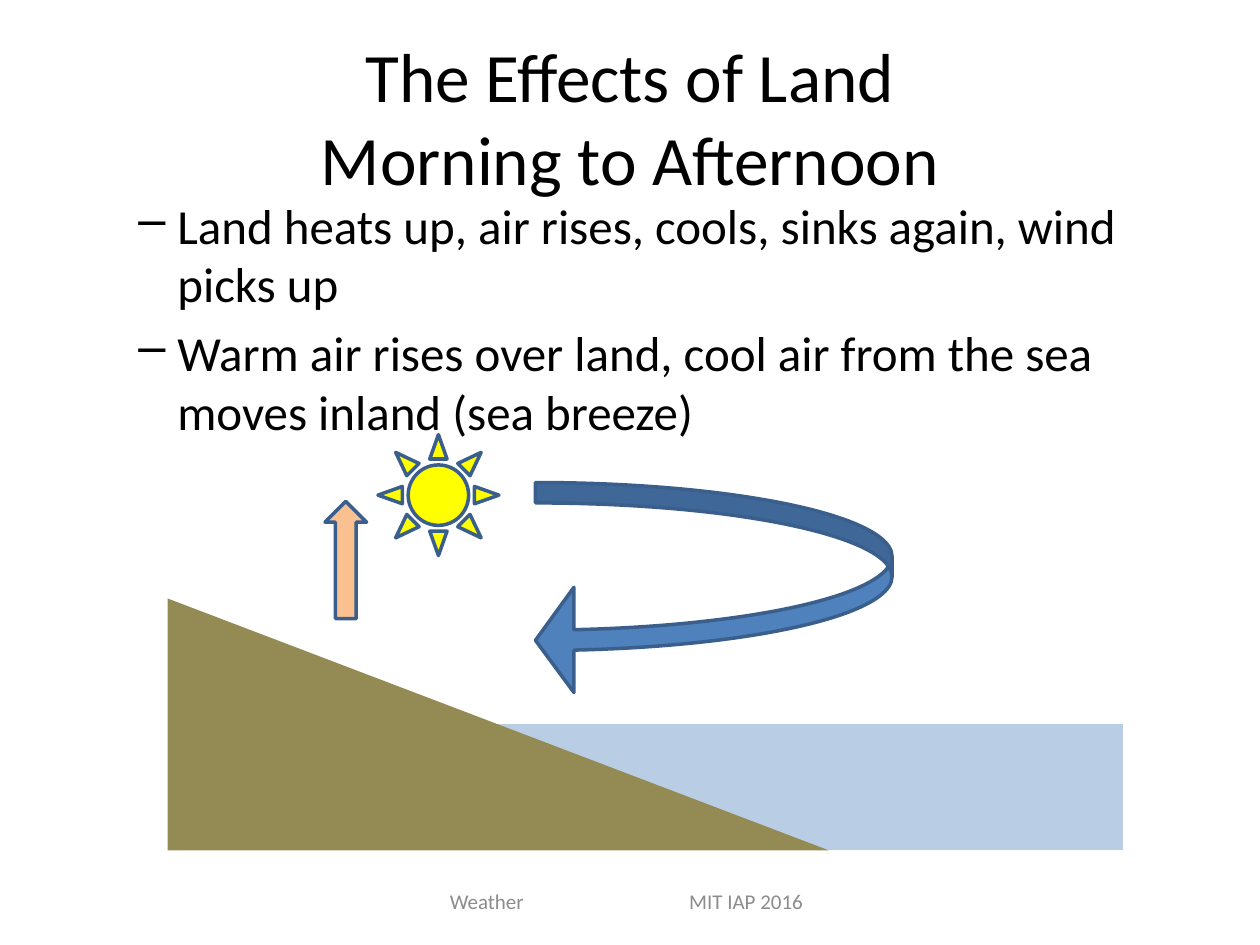
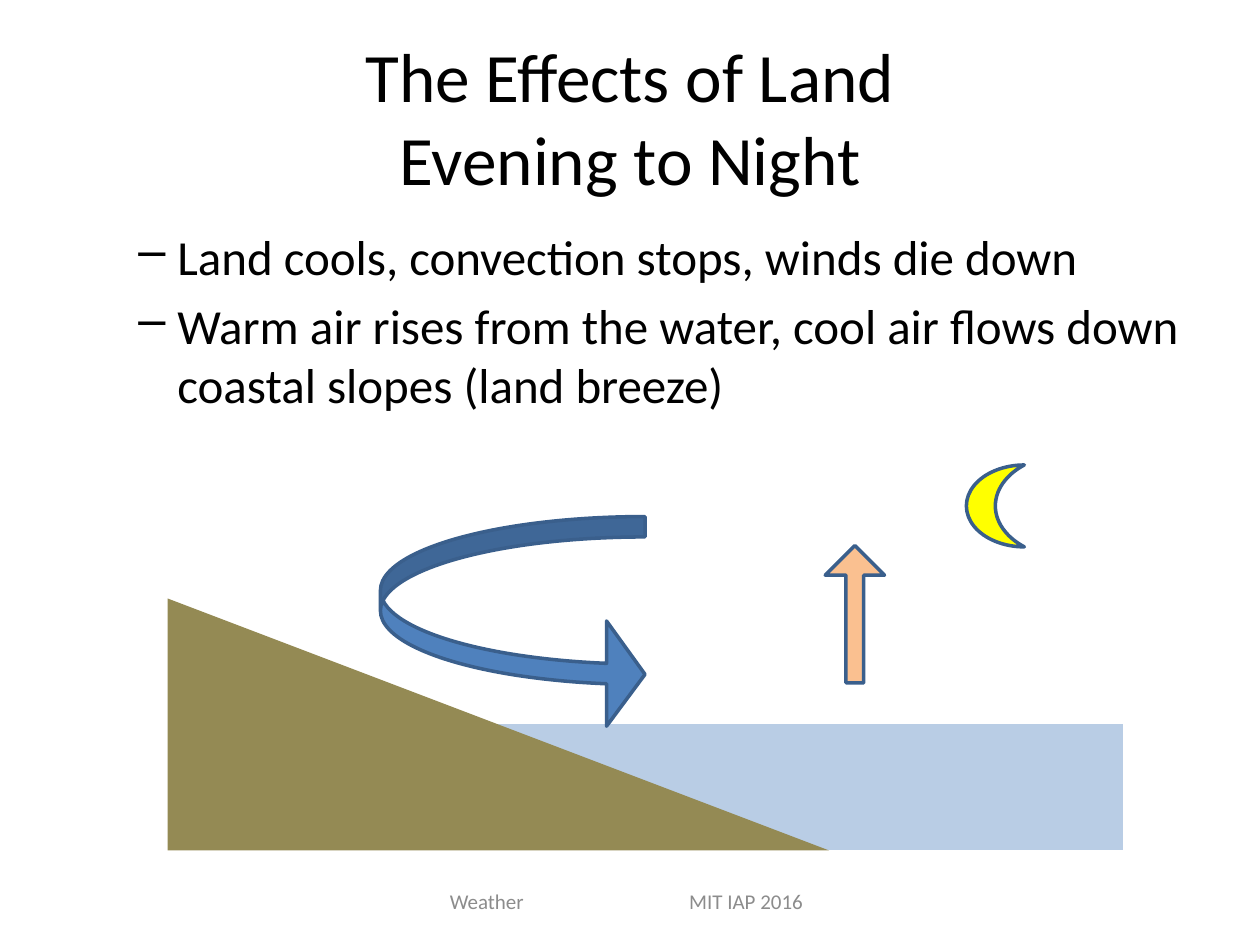
import collections

import pptx
import pptx.dml.color
import pptx.enum.shapes
import pptx.enum.text
import pptx.oxml
import pptx.oxml.ns
import pptx.util

Inches = pptx.util.Inches
Points = pptx.util.Pt
Shape = pptx.enum.shapes.MSO_SHAPE
Align = pptx.enum.text.PP_ALIGN
Anchor = pptx.enum.text.MSO_ANCHOR
Box = collections.namedtuple("Box", "left top width height")

FONT = "Calibri"
BLACK = "000000"
GREY = "8C8C8C"
SEA = "B9CDE5"
LAND = "948A54"
LIGHT = "FFFF00"
WARM_AIR = "FAC090"
WIND = "4F81BD"
OUTLINE = "3A5F8C"

TITLE = Box(0.5, 0.3, 9, 1.25)
SCENE = Box(1.33, 3.45, 7.58, 3.3)
FOOTER = Box(3.42, 6.95, 3.17, 0.4)
BREEZE_BENDS = (0.097, 0.5, 0.183)


def color(hex_code):
    return pptx.dml.color.RGBColor.from_string(hex_code)


def add_property(para, xml):
    namespace = pptx.oxml.ns.nsdecls("a")
    para._p.get_or_add_pPr().append(pptx.oxml.parse_xml(xml.format(namespace)))


def place(shape, box):
    shape.left, shape.top, shape.width, shape.height = map(Inches, box)


def write(para, text, size, hex_code=BLACK, align=Align.LEFT):
    para.text = text
    para.alignment = align
    for font in [para.font] + [span.font for span in para.runs]:
        font.name = FONT
        font.size = Points(size)
        font.color.rgb = color(hex_code)


def add_text_frame(page, box, anchor=Anchor.TOP):
    frame = page.shapes.add_textbox(*map(Inches, box)).text_frame
    frame.word_wrap = True
    frame.vertical_anchor = anchor
    return frame


def set_title(page, box, text):
    title = page.shapes.title
    place(title, box)
    frame = title.text_frame
    frame.word_wrap = True
    frame.auto_size = pptx.enum.text.MSO_AUTO_SIZE.NONE
    frame.vertical_anchor = Anchor.MIDDLE
    write(frame.paragraphs[0], text, 39.6, align=Align.CENTER)


def add_points(page, box, points):
    frame = add_text_frame(page, box)
    for index, point in enumerate(points):
        para = frame.add_paragraph() if index else frame.paragraphs[0]
        properties = para._p.get_or_add_pPr()
        properties.set("marL", str(Inches(0.81)))
        properties.set("indent", str(Inches(-0.31)))
        if index:
            para.space_before = Points(5.6)
        add_property(para, '<a:buChar {} char="–"/>')
        write(para, point, 28)


def add_footer(page, box):
    frame = add_text_frame(page, box, Anchor.MIDDLE)
    frame.margin_left = Inches(0.15)
    para = frame.paragraphs[0]
    tab = f'<a:tab pos="{Inches(1.9)}" algn="l"/>'
    add_property(para, "<a:tabLst {}>" + tab + "</a:tabLst>")
    write(para, "Weather\tMIT IAP 2016", 12, GREY)


def add_part(page, scene, kind, offset, fill, outlined=True, bends=(), flipped=False):
    left, top, width, height = offset
    part = page.shapes.add_shape(
        kind, *map(Inches, (scene.left + left, scene.top + top, width, height)))
    part.shadow.inherit = False
    part.fill.solid()
    part.fill.fore_color.rgb = color(fill)
    if outlined:
        part.line.color.rgb = color(OUTLINE)
        part.line.width = Points(2)
    else:
        part.line.fill.background()
    for index, bend in enumerate(bends):
        part.adjustments[index] = bend
    if flipped:
        part._element.spPr.get_or_add_xfrm().set("flipH", "1")


def add_coast(page, scene):
    sea_height, land_height = 1, 2
    add_part(page, scene, Shape.FLOWCHART_PROCESS,
             (0, scene.height - sea_height, scene.width, sea_height), SEA, outlined=False)
    add_part(page, scene, Shape.RIGHT_TRIANGLE,
             (0, scene.height - land_height, 5.25, land_height), LAND, outlined=False)


def add_sea_breeze(page, scene):
    add_part(page, scene, Shape.SUN, (1.67, 0, 0.96, 0.96), LIGHT)
    add_part(page, scene, Shape.UP_ARROW, (1.25, 0.53, 0.33, 0.93), WARM_AIR)
    add_part(page, scene, Shape.CURVED_LEFT_ARROW, (2.92, 0.38, 2.83, 1.67), WIND,
             bends=BREEZE_BENDS)


def add_land_breeze(page, scene):
    add_part(page, scene, Shape.MOON, (6.34, 0.24, 0.46, 0.65), LIGHT)
    add_part(page, scene, Shape.UP_ARROW, (5.22, 0.88, 0.47, 1.09), WARM_AIR,
             bends=(0.299, 0.5))
    add_part(page, scene, Shape.CURVED_LEFT_ARROW, (1.69, 0.65, 2.1, 1.67), WIND,
             bends=BREEZE_BENDS, flipped=True)


def add_breeze_page(deck, time_of_day, points_top, points, add_breeze):
    page = deck.slides.add_slide(deck.slide_layouts[5])
    set_title(page, TITLE, "The Effects of Land\v" + time_of_day)
    add_points(page, Box(0.5, points_top, 9, 6.7 - points_top), points)
    add_footer(page, FOOTER)
    add_coast(page, SCENE)
    add_breeze(page, SCENE)


def main():
    deck = pptx.Presentation()
    deck.slide_width, deck.slide_height = Inches(10), Inches(7.5)
    add_breeze_page(deck, "Morning to Afternoon", 1.5, [
        "Land heats up, air rises, cools, sinks again, wind picks up",
        "Warm air rises over land, cool air from the sea moves inland (sea breeze)",
    ], add_sea_breeze)
    add_breeze_page(deck, "Evening to Night", 1.75, [
        "Land cools, convection stops, winds die down",
        "Warm air rises from the water, cool air flows down coastal slopes (land breeze)",
    ], add_land_breeze)
    deck.save("out.pptx")


if __name__ == "__main__":
    main()
